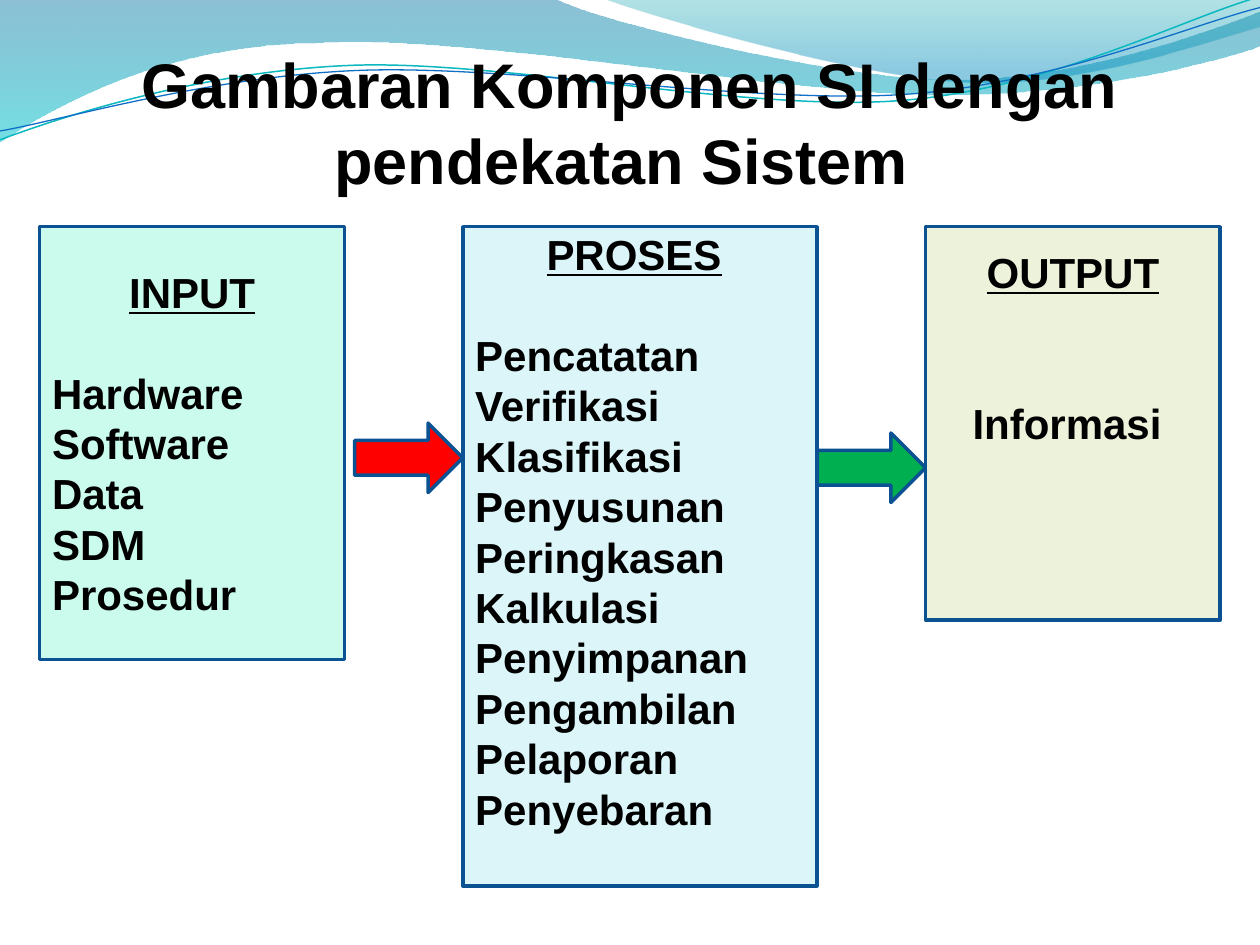
from lxml.etree import SubElement
from pptx import Presentation
from pptx.dml.color import RGBColor
from pptx.enum.shapes import MSO_SHAPE
from pptx.enum.text import MSO_ANCHOR, MSO_AUTO_SIZE, PP_ALIGN
from pptx.oxml.ns import qn
from pptx.util import Cm, Pt

COLORS = {
    "text": "000000", "border": "0B5292",
    "input": "CAFBED", "process": "DBF5F9", "output": "EDF3DB",
    "to_process": "FF0000", "to_output": "00B050",
    "wave_blue": "0074A1", "wave_cyan": "00C6CF",
    "crest_teal": "00A1A9", "crest_blue": "008BBF",
    "line_teal": "0AB8BF", "line_blue": "0F6FC6",
}
INCH = 2.54
LINE_HEIGHT = 1.2
BODY_SIZE = 24


def color(key):
    return RGBColor.from_string(COLORS[key])


def add_text(paragraph, text, size=BODY_SIZE, underline=False,
             align=PP_ALIGN.LEFT, before=0):
    paragraph.alignment = align
    paragraph.line_spacing = Pt(size * LINE_HEIGHT)
    paragraph.space_before = Pt(before)
    run = paragraph.add_run()
    run.text = text
    font = run.font
    font.name, font.size, font.bold = "Arial", Pt(size), True
    font.underline = underline
    font.color.rgb = color("text")


def add_curve(slide, left, top, segments, close):
    points = [(x * 1000, y * 1000) for segment in segments
              for x, y in zip(segment[::2], segment[1::2])]
    builder = slide.shapes.build_freeform(*points[0], scale=Cm(INCH) / 1000)
    builder.add_line_segments(points[1:], close=close)
    curve = builder.convert_to_shape(Cm(left), Cm(top))
    curve.shadow.inherit = False
    steps = iter(list(curve.element.iter(qn("a:lnTo"))))
    for segment in segments[1:]:
        step = next(steps)
        if len(segment) == 6:
            step.tag = qn("a:cubicBezTo")
            for control in (next(steps), next(steps)):
                step.append(control[0])
                control.getparent().remove(control)
    return curve


def add_waves(slide, left, top):
    wave = [(0, -0.01), (4.4, -0.01), (4.76, 0.17, 6.64, 0.63, 7.58, 0.63),
            (8.53, 0.63, 9.58, 0.26, 10, 0.09), (10.01, 0.36),
            (9.83, 0.44, 8.7, 0.76, 7.46, 0.75),
            (6.22, 0.75, 3.82, 0.28, 2.57, 0.34),
            (1.29, 0.35, 0.46, 0.83, -0.01, 1.13), (0, -0.01)]
    crest = [(4.79, -0.01), (5.09, 0.11, 6.82, 0.62, 7.69, 0.65),
             (8.56, 0.69, 9.61, 0.32, 10, 0.21), (10, 0), (4.79, -0.01)]
    teal_line = [(0, 1.11), (0.48, 0.93, 1.58, 0.57, 2.77, 0.52),
                 (3.95, 0.47, 5.93, 0.89, 7.13, 0.8),
                 (8.33, 0.71, 9.38, 0.15, 9.98, -0.02)]
    blue_line = [(0, 1.04), (0.47, 0.96, 1.64, 0.61, 2.83, 0.56),
                 (4.03, 0.51, 5.97, 0.83, 7.17, 0.75),
                 (8.36, 0.67, 9.41, 0.21, 10, 0.06)]
    bands = [
        (wave, [(0, "wave_blue", 45), (1, "wave_cyan", 55)]),
        (crest, [(0, "crest_teal", 30), (0.8, "crest_blue", 45)]),
    ]
    for segments, stops in bands:
        band = add_curve(slide, left, top, segments, True)
        band.line.fill.background()
        band.fill.gradient()
        band.fill.gradient_angle = 270
        for stop, (position, key, _) in zip(band.fill.gradient_stops, stops):
            stop.position = position
            stop.color.rgb = color(key)
        for rgb, (_, _, opacity) in zip(band.element.spPr.iter(qn("a:srgbClr")), stops):
            SubElement(rgb, qn("a:alpha")).set("val", str(opacity * 1000))
    for segments, key, width in [(teal_line, "line_teal", 0.85),
                                 (blue_line, "line_blue", 0.75)]:
        strand = add_curve(slide, left, top, segments, False)
        strand.fill.background()
        strand.line.color.rgb = color(key)
        strand.line.width = Pt(width)


def add_title(slide, left, top, width, height, text):
    title = slide.shapes.title
    title.element.getparent().append(title.element)
    title.left, title.top = Cm(left), Cm(top)
    title.width, title.height = Cm(width), Cm(height)
    frame = title.text_frame
    frame.auto_size = MSO_AUTO_SIZE.NONE
    frame.word_wrap = True
    frame.vertical_anchor = MSO_ANCHOR.BOTTOM
    frame.margin_left = frame.margin_right = frame.margin_bottom = 0
    frame.margin_top = Cm(0.13)
    add_text(frame.paragraphs[0], text, size=36, align=PP_ALIGN.CENTER)


def add_block(slide, kind, left, top, width, height, key):
    block = slide.shapes.add_shape(kind, Cm(left), Cm(top), Cm(width), Cm(height))
    block.shadow.inherit = False
    block.fill.solid()
    block.fill.fore_color.rgb = color(key)
    block.line.color.rgb = color("border")
    block.line.width = Pt(2)
    return block


def add_stage(slide, left, top, width, height, key, heading, items,
              inset, gap_lines=1, heading_tail="", align=PP_ALIGN.LEFT):
    stage = add_block(slide, MSO_SHAPE.RECTANGLE, left, top, width, height, key)
    frame = stage.text_frame
    frame.word_wrap = True
    frame.vertical_anchor = MSO_ANCHOR.TOP
    frame.margin_top = Cm(inset)
    frame.margin_bottom = 0
    first = frame.paragraphs[0]
    add_text(first, heading, underline=True, align=PP_ALIGN.CENTER)
    if heading_tail:
        add_text(first, heading_tail, align=PP_ALIGN.CENTER)
    gap = gap_lines * BODY_SIZE * LINE_HEIGHT
    for index, item in enumerate(items):
        add_text(frame.add_paragraph(), item, align=align,
                 before=0 if index else gap)


def main():
    presentation = Presentation()
    presentation.slide_width, presentation.slide_height = Cm(25.4), Cm(19.05)
    slide = presentation.slides.add_slide(presentation.slide_layouts[5])
    add_waves(slide, 0, 0)
    add_title(slide, 0.99, 0.77, 23.42, 3.2,
              "Gambaran Komponen SI dengan pendekatan Sistem ")

    stage_top = 4.57
    add_stage(slide, 0.8, stage_top, 6.15, 8.73, "input", "INPUT",
              ["Hardware", "Software", "Data", "SDM", "Prosedur"], inset=0.8)
    add_stage(slide, 9.33, stage_top, 7.14, 13.29, "process", "PROSES",
              ["Pencatatan", "Verifikasi", "Klasifikasi", "Penyusunan",
               "Peringkasan", "Kalkulasi", "Penyimpanan", "Pengambilan",
               "Pelaporan", "Penyebaran"], inset=0.04, heading_tail=" ")
    add_stage(slide, 18.66, stage_top, 5.94, 7.93, "output", "OUTPUT",
              ["Informasi "], inset=0.4, gap_lines=2, align=PP_ALIGN.CENTER)

    for left, top, key in [(7.15, 8.53, "to_process"), (16.48, 8.73, "to_output")]:
        add_block(slide, MSO_SHAPE.RIGHT_ARROW, left, top, 2.18, 1.4, key)
    presentation.save("out.pptx")


if __name__ == "__main__":
    main()
